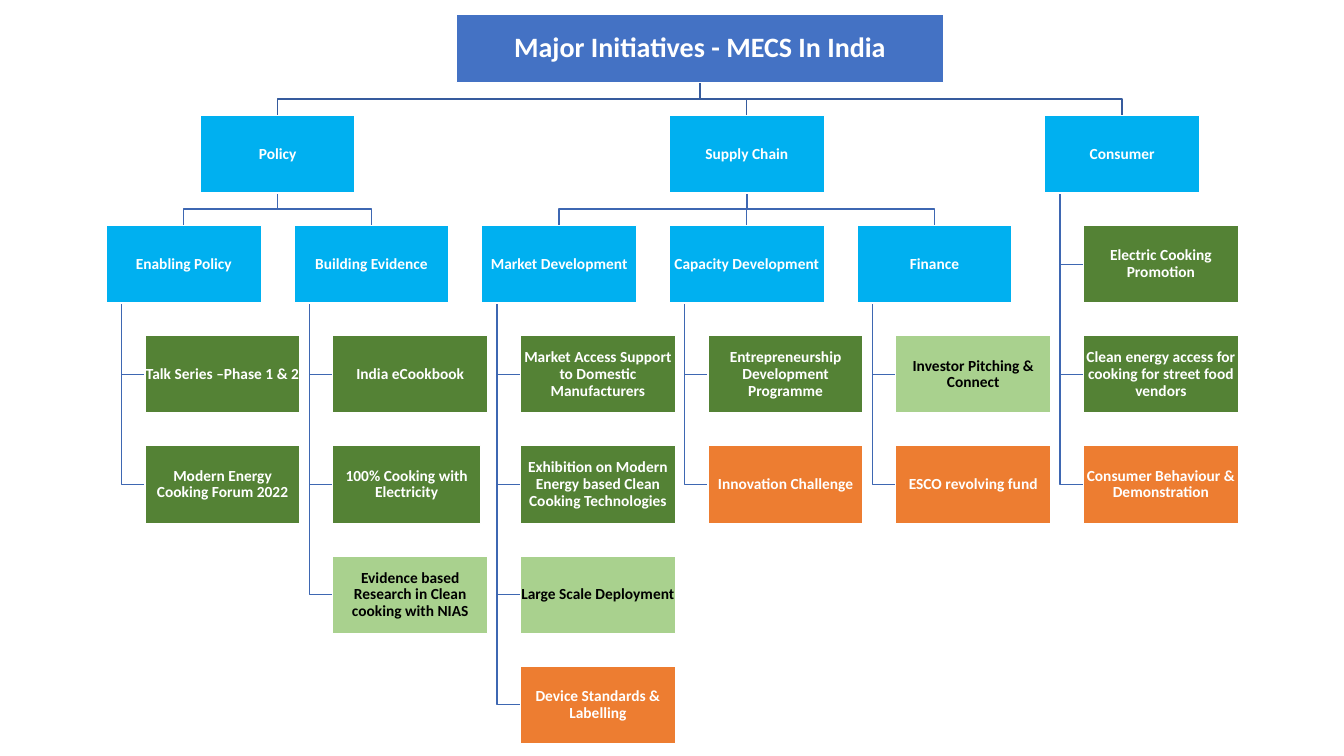
from pptx import Presentation
from pptx.dml.color import RGBColor
from pptx.enum.shapes import MSO_CONNECTOR, MSO_SHAPE
from pptx.enum.text import MSO_ANCHOR, PP_ALIGN
from pptx.oxml.ns import qn
from pptx.util import Pt
from lxml.etree import SubElement

COLORS = {
    "title": "4472C4", "heading": "00B0F0", "green": "548235",
    "light": "A9D18E", "orange": "ED7D31", "white": "FFFFFF",
    "black": "000000", "main_line": "365B9D", "line": "3E67B2",
}

# Chart grid, in points
GRID_LEFT, GRID_TOP = 75.9, 82.4
COLUMN_STEP, ROW_STEP = 134.05, 78.66
BOX_WIDTH, BOX_HEIGHT = 110.8, 55.4
TASK_INDENT, STEM_INDENT = 27.7, 11.08
TITLE = "Major Initiatives - MECS In India"
TITLE_FRAME = (326.1, 10, 347.8, 49)
SHORT_TASK, SHORT_WIDTH = "100% Cooking with Electricity", 105.8

# Headings: name, column, row, index of the heading above, tasks below
HEADINGS = [
    ("Policy", 0.5, 0, None, []),
    ("Supply Chain", 3, 0, None, []),
    ("Consumer", 5, 0, None, [
        ("Electric Cooking Promotion", "green"),
        ("Clean energy access for cooking for street food vendors", "green"),
        ("Consumer Behaviour & Demonstration", "orange")]),
    ("Enabling Policy", 0, 1, 0, [
        ("Talk Series –Phase 1 & 2", "green"),
        ("Modern Energy Cooking Forum 2022", "green")]),
    ("Building Evidence", 1, 1, 0, [
        ("India eCookbook", "green"),
        (SHORT_TASK, "green"),
        ("Evidence based Research in Clean cooking with NIAS", "light")]),
    ("Market Development", 2, 1, 1, [
        ("Market Access Support to Domestic Manufacturers", "green"),
        ("Exhibition on Modern Energy based Clean Cooking Technologies", "green"),
        ("Large Scale Deployment", "light"),
        ("Device Standards & Labelling", "orange")]),
    ("Capacity Development", 3, 1, 1, [
        ("Entrepreneurship Development Programme", "green"),
        ("Innovation Challenge", "orange")]),
    ("Finance", 4, 1, 1, [
        ("Investor Pitching & Connect", "light"),
        ("ESCO revolving fund", "orange")]),
]


def rgb(name):
    return RGBColor.from_string(COLORS[name])


def grid_frame(column, row):
    return (GRID_LEFT + column * COLUMN_STEP, GRID_TOP + row * ROW_STEP,
            BOX_WIDTH, BOX_HEIGHT)


def task_frame(text, column, row):
    left, top, width, height = grid_frame(column, row)
    width = SHORT_WIDTH if text == SHORT_TASK else width
    return left + TASK_INDENT, top, width, height


def write_text(shape, text, size=11, color="white", bold=True):
    frame = shape.text_frame
    frame.word_wrap = True
    frame.vertical_anchor = MSO_ANCHOR.MIDDLE
    frame.margin_left = frame.margin_right = Pt(0.55)
    frame.margin_top = frame.margin_bottom = Pt(0.55)
    paragraph = frame.paragraphs[0]
    paragraph.alignment = PP_ALIGN.CENTER
    paragraph.line_spacing = 0.9
    run = paragraph.add_run()
    run.text = text
    run.font.name = "Calibri"
    run.font.size = Pt(size)
    run.font.bold = bold
    run.font.color.rgb = rgb(color)


def add_box(slide, frame, text, fill, **text_format):
    shape = slide.shapes.add_shape(MSO_SHAPE.RECTANGLE, *map(Pt, frame))
    shape.shadow.inherit = False
    shape.fill.solid()
    shape.fill.fore_color.rgb = rgb(fill)
    shape.line.color.rgb = rgb("white")
    shape.line.width = Pt(1)
    write_text(shape, text, **text_format)
    return shape


def add_bent_line(slide, points, color="line"):
    start, *rest = [(Pt(x), Pt(y)) for x, y in points]
    builder = slide.shapes.build_freeform(*start)
    builder.add_line_segments(rest, close=False)
    shape = builder.convert_to_shape()
    shape.shadow.inherit = False
    shape.fill.background()
    shape.line.color.rgb = rgb(color)
    shape.line.width = Pt(1)


def add_straight_line(slide, x, top, bottom):
    connector = slide.shapes.add_connector(
        MSO_CONNECTOR.STRAIGHT, Pt(x), Pt(top), Pt(x), Pt(bottom))
    connector.line.color.rgb = rgb("line")
    connector.line.width = Pt(1)
    SubElement(connector._element.spPr, qn("a:effectLst"))
    return connector


def link_headings(slide, parent, child, color):
    """Run a line from the parent's bottom to the child's top."""
    left, top, width, height = parent
    start_x, start_y = left + width / 2, top + height
    end_x, end_y = child[0] + child[2] / 2, child[1]
    if start_x == end_x:
        return add_straight_line(slide, start_x, start_y, end_y)
    middle = (start_y + end_y) / 2
    add_bent_line(slide, [(start_x, start_y), (start_x, middle),
                          (end_x, middle), (end_x, end_y)], color)
    return None


def link_task(slide, heading, task):
    stem = heading[0] + STEM_INDENT
    middle = task[1] + task[3] / 2
    add_bent_line(slide, [(stem, heading[1] + heading[3]),
                          (stem, middle), (task[0], middle)])


def main():
    presentation = Presentation()
    presentation.slide_width, presentation.slide_height = Pt(960), Pt(540)
    slide = presentation.slides.add_slide(presentation.slide_layouts[6])

    # Lines, behind the boxes
    straight_links = []
    for index, (_, column, row, parent, tasks) in enumerate(HEADINGS):
        heading = grid_frame(column, row)
        if parent is None:
            link_headings(slide, TITLE_FRAME, heading, "main_line")
        else:
            above = grid_frame(*HEADINGS[parent][1:3])
            connector = link_headings(slide, above, heading, "line")
            if connector is not None:
                straight_links.append((connector, parent, index))
        for offset, (text, _) in enumerate(tasks, start=1):
            link_task(slide, heading, task_frame(text, column, row + offset))

    # Title, headings and their tasks
    add_box(slide, TITLE_FRAME, TITLE, "title", size=20)
    heading_boxes = []
    for name, column, row, _, tasks in HEADINGS:
        heading_boxes.append(
            add_box(slide, grid_frame(column, row), name, "heading"))
        for offset, (text, fill) in enumerate(tasks, start=1):
            add_box(slide, task_frame(text, column, row + offset), text, fill,
                    color="black" if fill == "light" else "white")

    # Join straight lines to their boxes
    for connector, parent, child in straight_links:
        connector.begin_connect(heading_boxes[parent], 2)
        connector.end_connect(heading_boxes[child], 0)

    presentation.save("out.pptx")


if __name__ == "__main__":
    main()
